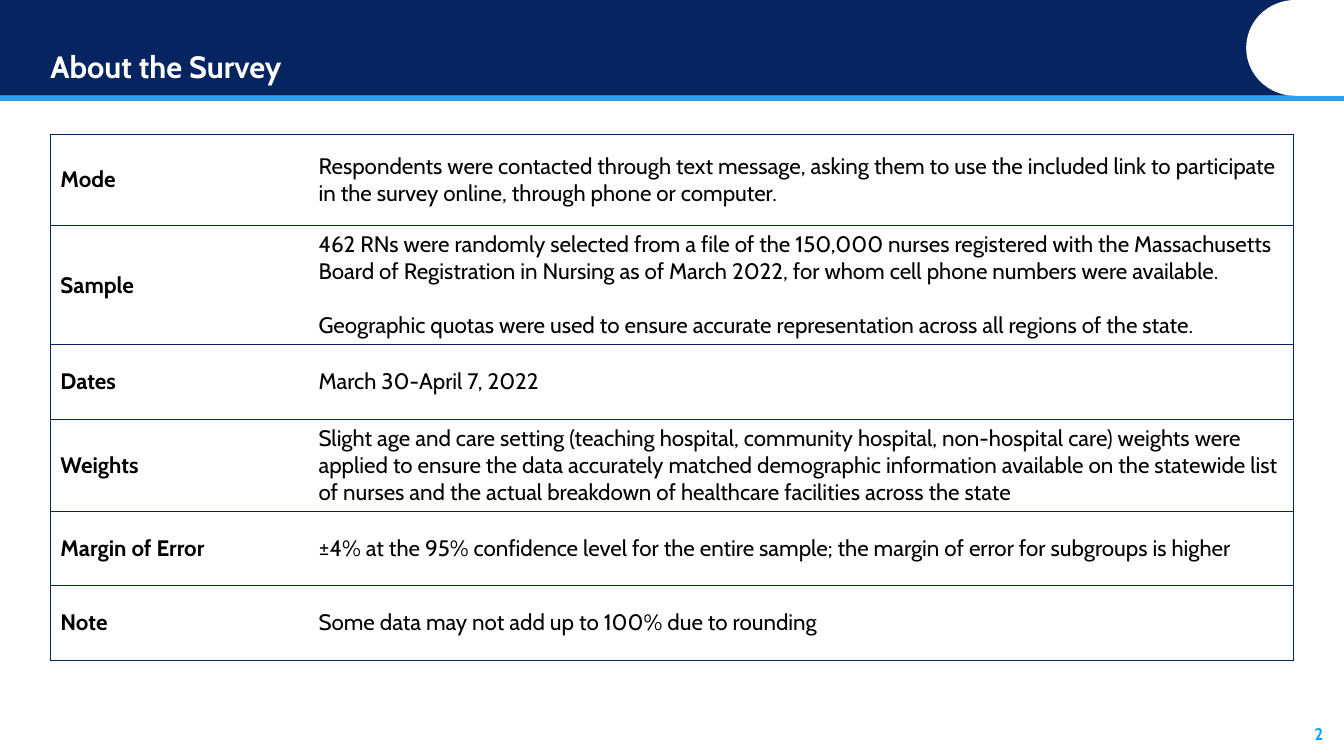
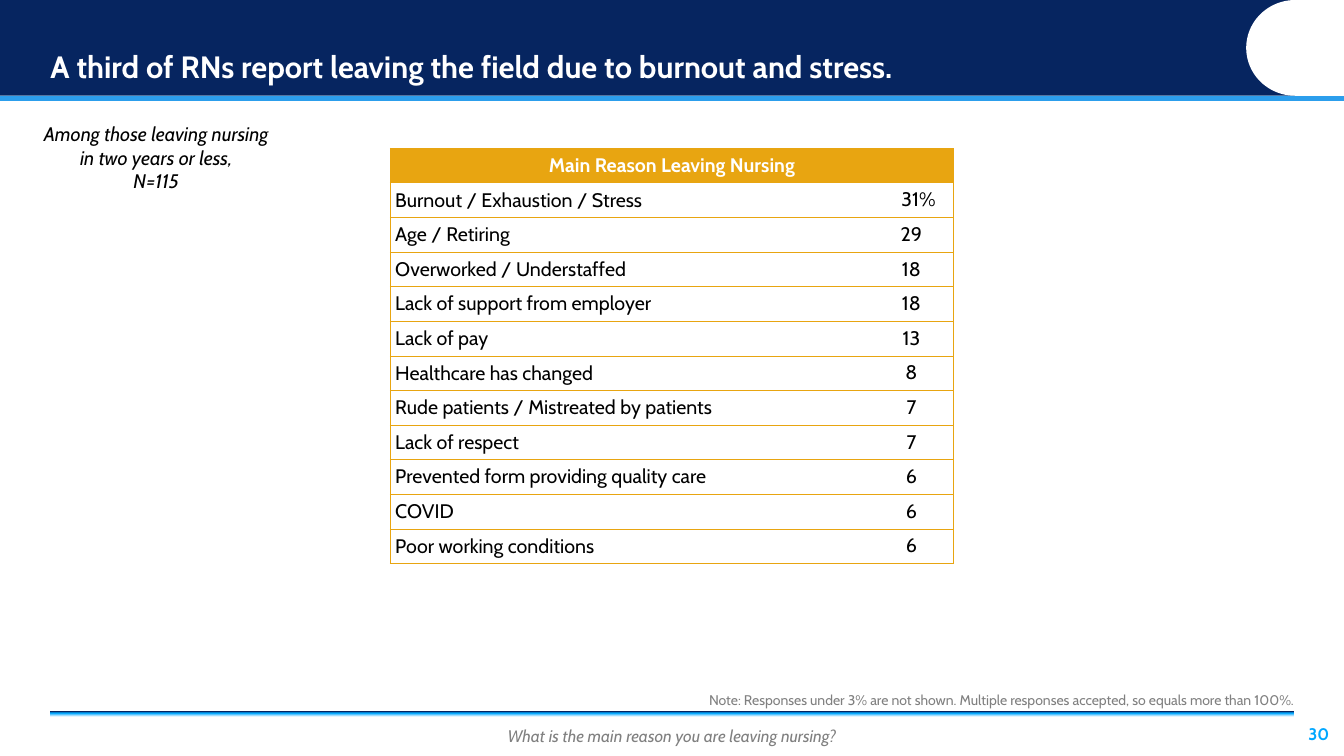
from lxml.etree import SubElement
from pptx import Presentation
from pptx.dml.color import RGBColor
from pptx.enum.shapes import MSO_SHAPE
from pptx.enum.text import MSO_ANCHOR, MSO_AUTO_SIZE, PP_ALIGN
from pptx.oxml import parse_xml
from pptx.oxml.ns import nsdecls, qn
from pptx.util import Inches, Pt

FONT = "Cabin"
NAVY, BLUE, SKY, GOLD = "062560", "2C9EEC", "00A7FF", "E8A511"
WHITE, BLACK, GRAY = "FFFFFF", "000000", "808080"
NO_STYLE = "{2D5ABB26-0587-4C30-8999-92F81FD0307C}"
WIDTH, HEIGHT, MARGIN = 13.33, 7.5, 0.5
CONTENT_W = WIDTH - 2 * MARGIN
FOOTER_TOP, FOOTER_H = 7.05, 0.45

SURVEY = [
    ("Mode", ["Respondents were contacted through text message, asking them to use the included link to participate in the survey online, through phone or computer."], 0.91),
    ("Sample", ["462 RNs were randomly selected from a file of the 150,000 nurses registered with the Massachusetts Board of Registration in Nursing as of March 2022, for whom cell phone numbers were available.",
                "Geographic quotas were used to ensure accurate representation across all regions of the state."], 1.18),
    ("Dates", ["March 30-April 7, 2022"], 0.74),
    ("Weights", ["Slight age and care setting (teaching hospital, community hospital, non-hospital care) weights were applied to ensure the data accurately matched demographic information available on the statewide list of nurses and the actual breakdown of healthcare facilities across the state"], 0.91),
    ("Margin of Error", ["±4% at the 95% confidence level for the entire sample; the margin of error for subgroups is higher"], 0.74),
    ("Note", ["Some data may not add up to 100% due to rounding"], 0.74),
]

REASONS = [
    ("Burnout / Exhaustion / Stress", "31%"),
    ("Age / Retiring", "29"),
    ("Overworked / Understaffed", "18"),
    ("Lack of support from employer", "18"),
    ("Lack of pay", "13"),
    ("Healthcare has changed", "8"),
    ("Rude patients / Mistreated by patients", "7"),
    ("Lack of respect", "7"),
    ("Prevented form providing quality care", "6"),
    ("COVID", "6"),
    ("Poor working conditions", "6"),
]


def rgb(color):
    return RGBColor.from_string(color)


def place(sp, x, y, w, h):
    sp.left, sp.top, sp.width, sp.height = (Inches(v) for v in (x, y, w, h))


def write(tf, *lines, size, color=BLACK, bold=False, italic=False,
          align=PP_ALIGN.LEFT, gap=0, spacing=1.0):
    for i, line in enumerate(lines):
        p = tf.add_paragraph() if i else tf.paragraphs[0]
        p.alignment = align
        p.line_spacing = spacing
        p.space_before = Pt(gap if i else 0)
        r = p.add_run()
        r.text = line
        f = r.font
        f.name, f.size, f.bold, f.italic = FONT, Pt(size), bold, italic
        f.color.rgb = rgb(color)


def set_frame(tf, anchor, top=0, bottom=0):
    tf.word_wrap = True
    tf.auto_size = MSO_AUTO_SIZE.NONE
    tf.vertical_anchor = anchor
    tf.margin_left = tf.margin_right = 0
    tf.margin_top, tf.margin_bottom = Inches(top), Inches(bottom)


def add_text(s, box, *lines, anchor=MSO_ANCHOR.TOP, inset=0, **fmt):
    sp = s.shapes.add_textbox(*(Inches(v) for v in box))
    set_frame(sp.text_frame, anchor, inset, inset)
    write(sp.text_frame, *lines, **fmt)


def add_master_bands(prs, s):
    bands = [
        (MSO_SHAPE.RECTANGLE, (0, 0, WIDTH, 0.95), NAVY),
        (MSO_SHAPE.RECTANGLE, (0, 0.95, WIDTH, 0.05), BLUE),
        (MSO_SHAPE.FLOWCHART_DELAY, (12.36, 0, 0.97, 0.95), WHITE),
    ]
    tree = prs.slide_master.shapes._spTree
    for i, (kind, box, color) in enumerate(bands):
        sp = s.shapes.add_shape(kind, *(Inches(v) for v in box))
        sp.shadow.inherit = False
        sp.fill.solid()
        sp.fill.fore_color.rgb = rgb(color)
        sp.line.fill.background()
        if kind == MSO_SHAPE.FLOWCHART_DELAY:
            sp.rotation = 180
        sp._element.nvSpPr.cNvPr.set("id", str(20 + i))
        tree.append(sp._element)


def add_title(s, title, number):
    sp = s.shapes.title
    place(sp, MARGIN, 0.1, 11.75, 0.75)
    set_frame(sp.text_frame, MSO_ANCHOR.BOTTOM)
    write(sp.text_frame, title, size=22, color=WHITE, bold=True, spacing=0.9)
    add_text(s, (12.83, FOOTER_TOP, 0.5, FOOTER_H), number, size=12, color=SKY,
             bold=True, align=PP_ALIGN.CENTER, anchor=MSO_ANCHOR.MIDDLE)


def add_question(s, question):
    sp = s.placeholders[1]
    place(sp, MARGIN, FOOTER_TOP, CONTENT_W, FOOTER_H)
    stops = [(0, WHITE), (86, WHITE), (88, "CCEDFF"), (94, SKY), (100, NAVY)]
    gs = "".join(f'<a:gs pos="{pos * 1000}"><a:srgbClr val="{c}"/></a:gs>' for pos, c in stops)
    sp._element.spPr.append(parse_xml(
        f'<a:gradFill rotWithShape="1" {nsdecls("a")}><a:gsLst>{gs}</a:gsLst>'
        '<a:lin ang="16200000" scaled="0"/></a:gradFill>'))
    tf = sp.text_frame
    set_frame(tf, MSO_ANCHOR.MIDDLE, top=0.05)
    pPr = tf.paragraphs[0]._p.get_or_add_pPr()
    pPr.set("marL", "0")
    pPr.set("indent", "0")
    SubElement(pPr, qn("a:buNone"))
    write(tf, question, size=12, color=GRAY, italic=True, align=PP_ALIGN.CENTER)


def set_borders(cell, color, sides):
    tcPr = cell._tc.get_or_add_tcPr()
    for side in "LRTB":
        paint = f'<a:solidFill><a:srgbClr val="{color}"/></a:solidFill>' if side in sides else "<a:noFill/>"
        tcPr.append(parse_xml(f'<a:ln{side} w="6350" {nsdecls("a")}>{paint}</a:ln{side}>'))


def add_grid(s, x, y, cols, rows, color):
    gf = s.shapes.add_table(len(rows), len(cols), *(Inches(v) for v in (x, y, sum(cols), sum(rows))))
    tbl = gf.table
    tbl.first_row = tbl.horz_banding = False
    tbl._tbl.tblPr.find(qn("a:tableStyleId")).text = NO_STYLE
    for col, w in zip(tbl.columns, cols):
        col.width = Inches(w)
    for row, h in zip(tbl.rows, rows):
        row.height = Inches(h)
        for c, cell in enumerate(row.cells):
            sides = "TB" + ("L" if c == 0 else "") + ("R" if c == len(cols) - 1 else "")
            set_borders(cell, color, sides)
            cell.fill.background()
            cell.vertical_anchor = MSO_ANCHOR.MIDDLE
    return tbl


def add_survey_table(s, x, y):
    tbl = add_grid(s, x, y, [2.56, 9.77], [h for _, _, h in SURVEY], NAVY)
    for i, (label, lines, _) in enumerate(SURVEY):
        write(tbl.cell(i, 0).text_frame, label, size=16, bold=True)
        write(tbl.cell(i, 1).text_frame, *lines, size=16, gap=19.4)


def add_reason_table(s, x, y):
    count = len(REASONS) + 1
    tbl = add_grid(s, x, y, [4.75, 0.84], [4.12 / count] * count, GOLD)
    for cell in tbl.iter_cells():
        cell.margin_left = cell.margin_right = Inches(0.05)
        cell.margin_top = cell.margin_bottom = Inches(0.05)
    head = tbl.cell(0, 0)
    head.merge(tbl.cell(0, 1))
    head.fill.solid()
    head.fill.fore_color.rgb = rgb(GOLD)
    write(head.text_frame, "Main Reason Leaving Nursing", size=14, color=WHITE,
          bold=True, align=PP_ALIGN.CENTER)
    for i, (reason, share) in enumerate(REASONS, 1):
        write(tbl.cell(i, 0).text_frame, reason, size=14)
        value = tbl.cell(i, 1)
        value.vertical_anchor = MSO_ANCHOR.TOP
        if share.endswith("%"):
            value.margin_left = Inches(0.19)
        write(value.text_frame, share, size=14, align=PP_ALIGN.CENTER)


def add_survey_slide(prs):
    s = prs.slides.add_slide(prs.slide_layouts[5])
    add_master_bands(prs, s)
    add_title(s, "About the Survey", "2")
    add_survey_table(s, MARGIN, 1.33)


def add_reason_slide(prs):
    s = prs.slides.add_slide(prs.slide_layouts[1])
    add_title(s, "A third of RNs report leaving the field due to burnout and stress.", "30")
    add_question(s, "What is the main reason you are leaving nursing?")
    add_reason_table(s, 3.87, 1.47)
    add_text(s, (0.36, 1.21, 2.38, 0.71), "Among those leaving nursing in two years or less,", "N=115",
             size=14, italic=True, align=PP_ALIGN.CENTER)
    add_text(s, (MARGIN, 6.84, CONTENT_W, 0.21),
             "Note: Responses under 3% are not shown. Multiple responses accepted, so equals more than 100%.",
             size=10, color=GRAY, align=PP_ALIGN.RIGHT, anchor=MSO_ANCHOR.MIDDLE, inset=0.04)


def main():
    prs = Presentation()
    prs.slide_width, prs.slide_height = Inches(WIDTH), Inches(HEIGHT)
    add_survey_slide(prs)
    add_reason_slide(prs)
    prs.save("out.pptx")


if __name__ == "__main__":
    main()
